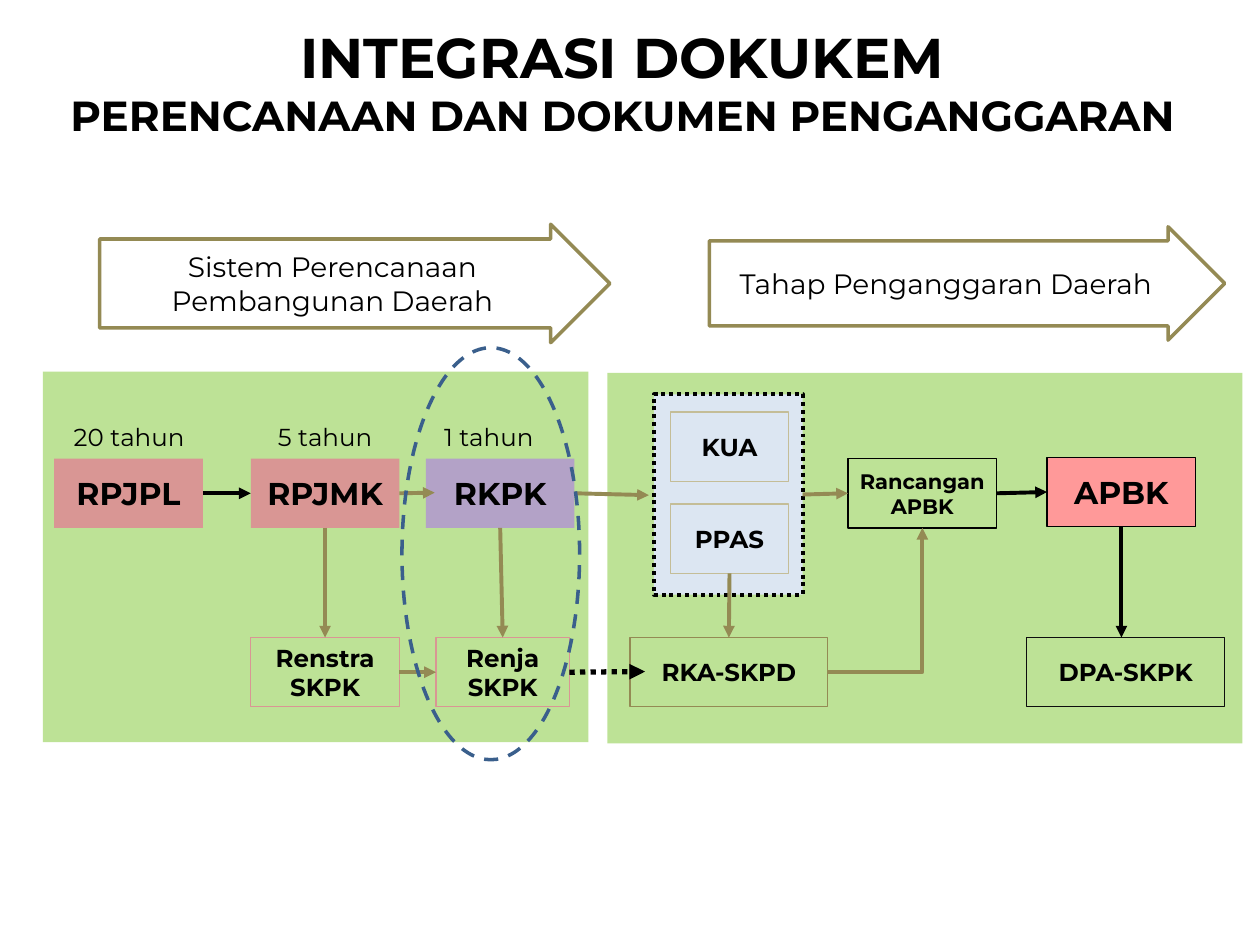
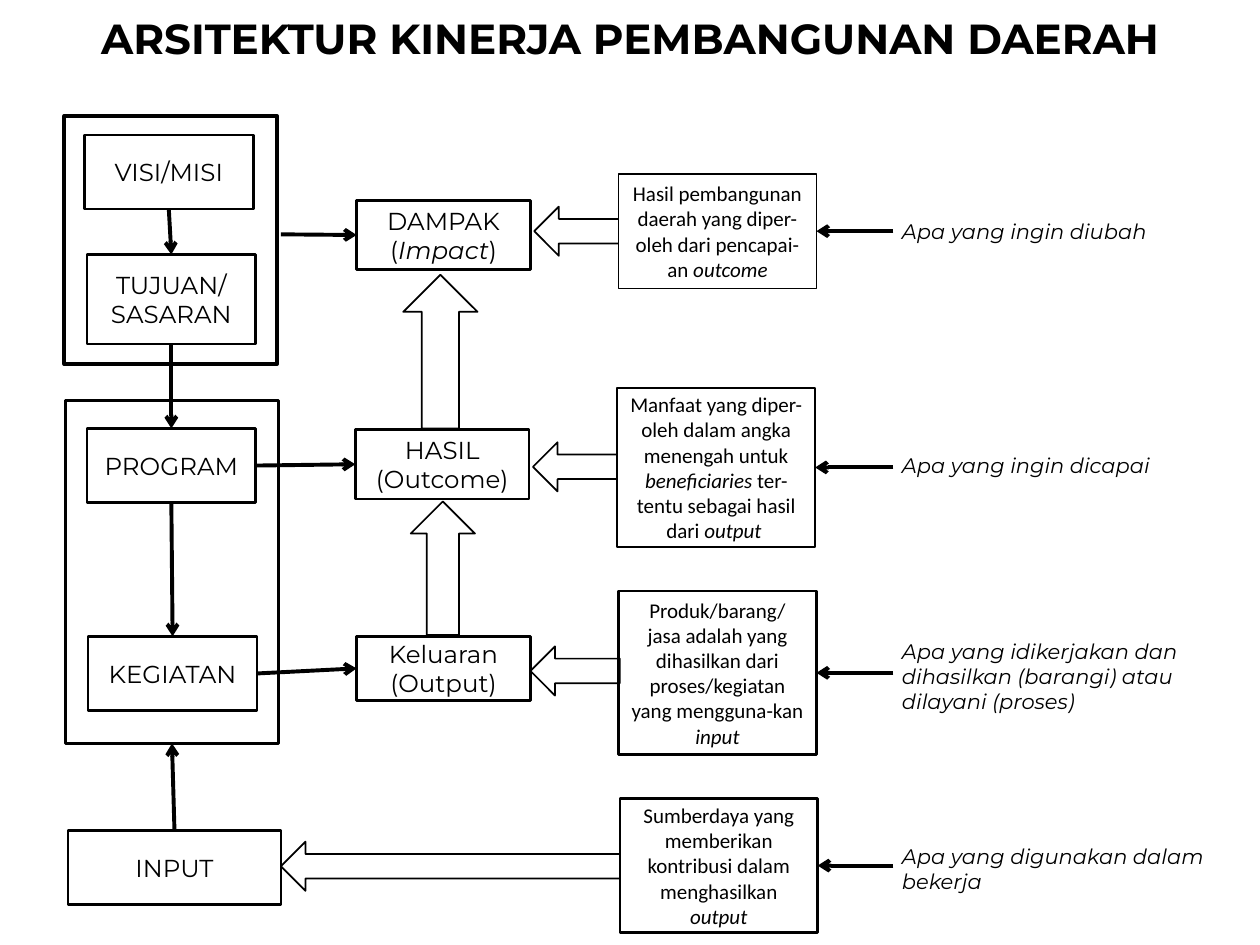
"""Build two slides on regional planning documents and performance architecture."""
from lxml.etree import SubElement
from pptx import Presentation
from pptx.dml.color import RGBColor
from pptx.enum.dml import MSO_LINE
from pptx.enum.shapes import MSO_CONNECTOR, MSO_SHAPE
from pptx.enum.text import MSO_ANCHOR, MSO_AUTO_SIZE, PP_ALIGN
from pptx.oxml.ns import qn
from pptx.util import Inches, Pt

RECT, ELLIPSE = MSO_SHAPE.RECTANGLE, MSO_SHAPE.OVAL
RIGHT_ARROW, LEFT_ARROW, UP_ARROW = MSO_SHAPE.RIGHT_ARROW, MSO_SHAPE.LEFT_ARROW, MSO_SHAPE.UP_ARROW
STRAIGHT, ELBOW = MSO_CONNECTOR.STRAIGHT, MSO_CONNECTOR.ELBOW
DOT, DASH = MSO_LINE.ROUND_DOT, MSO_LINE.DASH
TOP, MIDDLE = MSO_ANCHOR.TOP, MSO_ANCHOR.MIDDLE
LEFT, CENTER = PP_ALIGN.LEFT, PP_ALIGN.CENTER
NO_FIT = MSO_AUTO_SIZE.NONE
T, L, B, R = range(4)
BLACK, WHITE = "000000", "FFFFFF"
GREEN, PINK, PURPLE, PALE_BLUE, RED = "92D050", "D99694", "B3A2C7", "DCE6F2", "FF9999"
OLIVE, SAND, NAVY = "948A54", "C4BD97", "3A5F8C"
rgb = RGBColor.from_string


def style(shape, at, text="", fill=None, line=None, width=0.75, dash=None, font="Montserrat",
          size=14, bold=False, italic=False, align=CENTER, anchor=MIDDLE, wrap=True):
    """Place and format a shape; asterisks in the text switch italics."""
    shape.left, shape.top, shape.width, shape.height = map(Inches, at)
    if not shape.is_placeholder:
        shape.shadow.inherit = False
    if fill:
        shape.fill.solid()
        shape.fill.fore_color.rgb = rgb(fill)
    else:
        shape.fill.background()
    if line:
        shape.line.color.rgb = rgb(line)
        shape.line.width = Pt(width)
        if dash:
            shape.line.dash_style = dash
    else:
        shape.line.fill.background()
    if text:
        tf = shape.text_frame
        tf.auto_size, tf.word_wrap, tf.vertical_anchor = NO_FIT, wrap, anchor
        for i, row in enumerate(text.split("\n")):
            p = tf.add_paragraph() if i else tf.paragraphs[0]
            p.alignment = align
            for j, part in enumerate(row.split("*")):
                if part:
                    r = p.add_run()
                    r.text = part
                    r.font.name, r.font.size = font, Pt(size)
                    r.font.bold, r.font.italic = bold, italic or j % 2 == 1
                    r.font.color.rgb = rgb(BLACK)
    return shape


def link(s, start, end, color=BLACK, width=2.25, head="triangle", dash=None, kind=STRAIGHT):
    """Draw an arrow between two ends, each a point or a (shape, side) pair."""
    c = s.shapes.add_connector(kind, 0, 0, 0, 0)
    if isinstance(start[0], (int, float)):
        c.begin_x, c.begin_y = map(Inches, start)
    else:
        c.begin_connect(*start)
    if isinstance(end[0], (int, float)):
        c.end_x, c.end_y = map(Inches, end)
    else:
        c.end_connect(*end)
    c.line.color.rgb = rgb(color)
    c.line.width = Pt(width)
    if dash:
        c.line.dash_style = dash
    SubElement(c._element.spPr.find(qn("a:ln")), qn("a:tailEnd"), type=head)
    SubElement(c._element.spPr, qn("a:effectLst"))
    return c


prs = Presentation()
prs.slide_width, prs.slide_height = Inches(10), Inches(7.5)
title_only = prs.slide_layouts[5]
title_format = dict(size=24, bold=True, anchor=TOP)

s = prs.slides.add_slide(title_only)
title = style(s.shapes.title, (0, 0.13, 9.88, 1.04),
              "INTEGRASI DOKUKEM\nPERENCANAAN DAN DOKUMEN PENGANGGARAN", **title_format)
title.text_frame.paragraphs[0].runs[0].font.size = Pt(32)

for at in [(4.82, 2.96, 5.04, 2.94), (0.34, 2.95, 4.33, 2.94)]:
    panel = style(s.shapes.add_shape(RECT, 0, 0, 0, 0), at, fill=GREEN)
    color = panel._element.spPr.find(".//" + qn("a:srgbClr"))
    SubElement(color, qn("a:alpha"), val="60000")

budget_policy = style(s.shapes.add_shape(RECT, 0, 0, 0, 0), (5.19, 3.13, 1.18, 1.59),
                      fill=PALE_BLUE, line=BLACK, width=2.25, dash=DOT)

docs = {}
for text, x, y, w, size, fill, line in [
    ("RPJPL", 0.43, 3.64, 1.18, 18, PINK, None),
    ("RPJMK", 1.99, 3.64, 1.18, 18, PINK, None),
    ("RKPK", 3.38, 3.64, 1.18, 18, PURPLE, None),
    ("Renstra\nSKPK", 1.99, 5.06, 1.18, 14, None, PINK),
    ("Renja\nSKPK", 3.46, 5.06, 1.06, 14, None, PINK),
    ("KUA", 5.32, 3.27, 0.94, 14, None, SAND),
    ("PPAS", 5.32, 4, 0.94, 14, None, SAND),
    ("Rancangan\nAPBK", 6.73, 3.64, 1.18, 12, None, BLACK),
    ("RKA-SKPD", 5, 5.06, 1.57, 14, None, OLIVE),
    ("APBK", 8.31, 3.63, 1.18, 18, RED, BLACK),
    ("DPA-SKPK", 8.15, 5.06, 1.57, 14, None, "0D0D0D"),
]:
    docs[text.split("\n")[0]] = style(s.shapes.add_shape(RECT, 0, 0, 0, 0), (x, y, w, 0.55), text,
                                      fill=fill, line=line, size=size, bold=True, wrap=False)

for start, end, color in [
    ((docs["RPJPL"], R), (docs["RPJMK"], L), BLACK),
    ((docs["RPJMK"], R), (3.45, 3.91), OLIVE),
    ((docs["RPJMK"], B), (docs["Renstra"], T), OLIVE),
    ((docs["RKPK"], B), (docs["Renja"], T), OLIVE),
    ((docs["Renstra"], R), (docs["Renja"], L), OLIVE),
    ((docs["RKPK"], R), (5.15, 3.93), OLIVE),
    ((docs["PPAS"], B), (docs["RKA-SKPD"], T), OLIVE),
    ((budget_policy, R), (docs["Rancangan"], L), OLIVE),
    ((docs["Rancangan"], R), (docs["APBK"], L), BLACK),
    ((docs["APBK"], B), (8.9, 5.06), BLACK),
]:
    link(s, start, end, color)
link(s, (docs["Renja"], R), (5.12, 5.33), width=3, dash=DOT)
elbow = link(s, (docs["RKA-SKPD"], R), (docs["Rancangan"], B), OLIVE, kind=ELBOW)
elbow._element.spPr.find(qn("a:prstGeom")).set("prst", "bentConnector2")

for text, x, w in [("20 tahun", 0.42, 1.21), ("5 tahun", 1.99, 1.18), ("1 tahun", 3.33, 1.1)]:
    style(s.shapes.add_textbox(0, 0, 0, 0), (x, 3.3, w, 0.34), text, anchor=TOP)

for text, at in [
    ("Sistem Perencanaan Pembangunan Daerah", (0.79, 1.78, 4.05, 0.94)),
    ("Tahap Penganggaran Daerah", (5.63, 1.8, 4.09, 0.9)),
]:
    stage = style(s.shapes.add_shape(RIGHT_ARROW, 0, 0, 0, 0), at, text, line=OLIVE, width=2, size=16)
    stage.adjustments[0], stage.adjustments[1] = 0.75, 0.5

style(s.shapes.add_shape(ELLIPSE, 0, 0, 0, 0), (3.19, 2.76, 1.41, 3.27), line=NAVY, width=2, dash=DASH)

s = prs.slides.add_slide(title_only)
style(s.shapes.title, (0, 0.05, 10, 0.5), "ARSITEKTUR KINERJA PEMBANGUNAN DAERAH", **title_format)

boxes = {}
for name, at, text, width in [
    ("visi", (0.67, 1.07, 1.34, 0.59), "VISI/MISI", 1.5),
    ("tujuan", (0.69, 2.02, 1.34, 0.71), "TUJUAN/\nSASARAN", 1.5),
    ("program", (0.69, 3.4, 1.34, 0.59), "PROGRAM", 1.5),
    ("kegiatan", (0.7, 5.05, 1.34, 0.59), "KEGIATAN", 1.5),
    ("input", (0.54, 6.59, 1.69, 0.59), "INPUT", 1.5),
    ("goal frame", (0.51, 0.92, 1.69, 1.97), "", 2),
    ("work frame", (0.52, 3.18, 1.69, 2.72), "", 2),
    ("dampak", (2.83, 1.59, 1.38, 0.55), "DAMPAK\n(*Impact*)", 1.5),
    ("hasil", (2.82, 3.41, 1.38, 0.55), "HASIL\n(Outcome)", 1.5),
    ("keluaran", (2.83, 5.05, 1.38, 0.51), "Keluaran\n(Output)", 1.5),
]:
    boxes[name] = style(s.shapes.add_shape(RECT, 0, 0, 0, 0), at, text, line=BLACK, width=width)

for start, end in [
    ((boxes["visi"], B), (boxes["tujuan"], T)),
    ((boxes["tujuan"], B), (boxes["program"], T)),
    ((boxes["program"], B), (boxes["kegiatan"], T)),
    ((boxes["input"], T), (boxes["work frame"], B)),
    ((boxes["kegiatan"], R), (boxes["keluaran"], L)),
    ((boxes["program"], R), (boxes["hasil"], L)),
    ((2.23, 1.86), (boxes["dampak"], L)),
]:
    link(s, start, end, head="arrow")

for at in [(3.26, 3.98, 0.51, 1.06), (3.2, 2.18, 0.59, 1.22)]:
    style(s.shapes.add_shape(UP_ARROW, 0, 0, 0, 0), at, line=BLACK, width=1)

for x, y, h, width, fill, text, arrow, note, note_y, note_h in [
    (4.91, 1.38, 0.91, 1, WHITE,
     "Hasil pembangunan daerah yang diper-oleh dari pencapai-an *outcome*",
     (4.24, 1.64, 0.71), "Apa yang ingin diubah", 1.54, 0.59),
    (4.9, 3.08, 1.26, 1, WHITE,
     "Manfaat yang diper-oleh dalam angka menengah untuk *beneficiaries *"
     "ter-tentu sebagai hasil dari *output *",
     (4.23, 3.51, 0.71), "Apa yang ingin dicapai", 3.4, 0.59),
    (4.91, 4.69, 1.3, 1.5, None,
     "Produk/barang/\njasa adalah yang dihasilkan dari proses/kegiatan yang mengguna-kan *input*",
     (4.21, 5.13, 0.71), "Apa yang idikerjakan dan dihasilkan (barangi) atau dilayani (proses)",
     5.01, 0.71),
    (4.92, 6.34, 1.06, 1.5, WHITE,
     "Sumberdaya yang memberikan kontribusi dalam menghasilkan *output*",
     (2.23, 6.68, 2.76), "Apa yang digunakan dalam bekerja", 6.6, 0.59),
]:
    style(s.shapes.add_shape(LEFT_ARROW, 0, 0, 0, 0), (*arrow, 0.39), line=BLACK, width=1)
    meaning = style(s.shapes.add_shape(RECT, 0, 0, 0, 0), (x, y, 1.57, h), text, fill=fill,
                    line=BLACK, width=width, font="Calibri", size=12)
    style(s.shapes.add_textbox(0, 0, 0, 0), (7.06, note_y, 2.95, note_h), note,
          size=12, italic=True, align=LEFT)
    link(s, (7.09, y + h / 2), (meaning, R), head="arrow")

prs.save("out.pptx")
